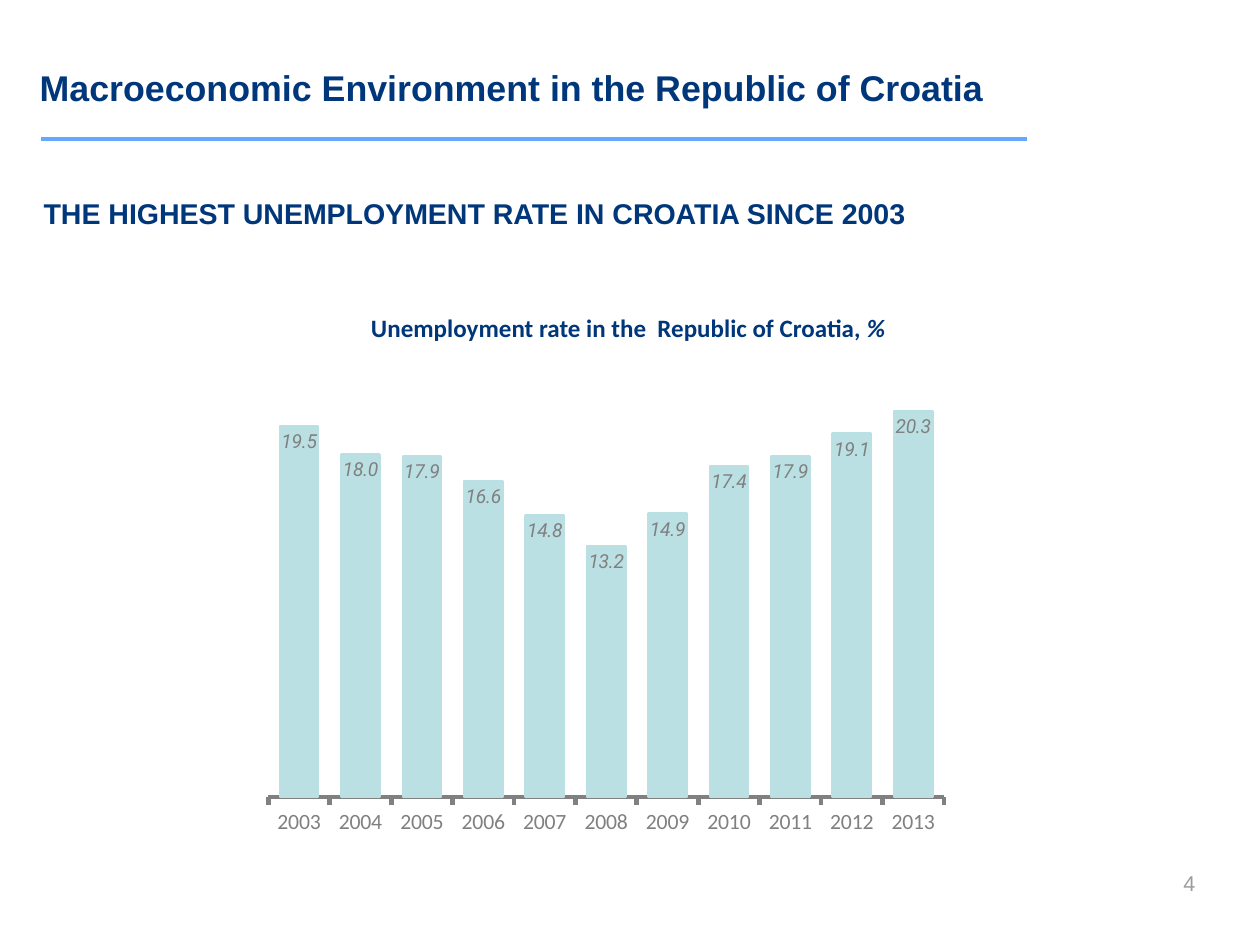
import dataclasses

import lxml.etree
import pptx
import pptx.chart.data
import pptx.dml.color
import pptx.enum.chart
import pptx.enum.shapes
import pptx.enum.text
import pptx.oxml
import pptx.oxml.ns
import pptx.util

PX = 7112
ALIGN = pptx.enum.text.PP_ALIGN
ANCHOR = pptx.enum.text.MSO_ANCHOR
YEARS = [str(year) for year in range(2003, 2014)]
RATES = [19.5, 18.0, 17.9, 16.6, 14.8, 13.2, 14.9, 17.4, 17.9, 19.1, 20.3]


@dataclasses.dataclass(frozen=True)
class Theme:
    """Colours, fonts and type sizes of the slide."""
    navy: str = "00367A"
    rule: str = "64A8FF"
    bar: str = "BBE0E3"
    grey: str = "808080"
    number: str = "9C9C9C"
    sans: str = "Arial"
    chart: str = "Calibri"
    label: str = "Roboto"
    title_pt: float = 20
    heading_pt: float = 16
    caption_pt: float = 14
    number_pt: float = 12
    axis_pt: float = 12.2
    label_pt: float = 10.8


THEME = Theme()


def emu(*lengths):
    """Turn px lengths into EMU."""
    return [length * PX for length in lengths]


def rgb(colour):
    """Return the colour object of a hex string."""
    return pptx.dml.color.RGBColor.from_string(colour)


def set_font(font, name, size, colour, bold=False, italic=False):
    """Style a font object."""
    font.name = name
    font.size = pptx.util.Pt(size)
    font.color.rgb = rgb(colour)
    font.bold = bold
    font.italic = italic


def add_text(s, box, text, name, size, colour, bold=True, align=ALIGN.LEFT, anchor=ANCHOR.TOP):
    """Add a one-paragraph text box and return its paragraph."""
    tf = s.shapes.add_textbox(*emu(*box)).text_frame
    tf.word_wrap = True
    tf.vertical_anchor = anchor
    p = tf.paragraphs[0]
    p.alignment = align
    p.add_run().text = text
    set_font(p.font, name, size, colour, bold)
    return p


def add_header(s, box):
    """Place the title and the rule below it."""
    x, y, w, h = box
    add_text(s, box, "Macroeconomic Environment in the Republic of Croatia",
             THEME.sans, THEME.title_pt, THEME.navy, anchor=ANCHOR.MIDDLE)
    rule_y = y + h + 8
    rule = s.shapes.add_connector(pptx.enum.shapes.MSO_CONNECTOR.STRAIGHT,
                                  *emu(x + 14, rule_y, x + 1000, rule_y))
    rule.line.color.rgb = rgb(THEME.rule)
    rule.line.width = pptx.util.Pt(2)
    lxml.etree.SubElement(rule._element.spPr, pptx.oxml.ns.qn("a:effectLst"))


def set_plot_area(chart, **fractions):
    """Fix the inner plot area as fractions of the chart."""
    area = chart._chartSpace.chart.plotArea
    for layout in area.findall(pptx.oxml.ns.qn("c:layout")):
        area.remove(layout)
    values = "".join(f'<c:{key} val="{value}"/>' for key, value in fractions.items())
    area.insert(0, pptx.oxml.parse_xml(
        f'<c:layout {pptx.oxml.ns.nsdecls("c")}><c:manualLayout><c:layoutTarget val="inner"/>'
        f'<c:xMode val="edge"/><c:yMode val="edge"/>{values}</c:manualLayout></c:layout>'))


def add_rate_chart(s, box):
    """Place the unemployment columns and their caption."""
    x, y, w, h = box
    data = pptx.chart.data.CategoryChartData()
    data.categories = YEARS
    data.add_series("Unemployment rate", RATES)
    chart = s.shapes.add_chart(pptx.enum.chart.XL_CHART_TYPE.COLUMN_STACKED,
                               *emu(*box), data).chart
    chart.has_title = False
    chart.has_legend = False
    set_font(chart.font, THEME.chart, THEME.axis_pt, THEME.grey)
    set_plot_area(chart, x=0, y=0.05, w=0.87, h=0.72)

    years = chart.category_axis
    years.major_tick_mark = pptx.enum.chart.XL_TICK_MARK.OUTSIDE
    years.format.line.color.rgb = rgb(THEME.grey)
    years.format.line.width = pptx.util.Pt(2.7)
    rates = chart.value_axis
    rates.minimum_scale = 0
    rates.maximum_scale = 23
    rates.has_major_gridlines = False
    rates.visible = False

    plot = chart.plots[0]
    plot.gap_width = 60
    plot.overlap = 100
    plot.vary_by_categories = False
    columns = plot.series[0]
    columns.format.fill.solid()
    columns.format.fill.fore_color.rgb = rgb(THEME.bar)
    columns.format.line.color.rgb = rgb(THEME.bar)
    columns.format.line.width = pptx.util.Pt(1.35)
    labels = columns.data_labels
    labels.show_value = True
    labels.number_format = "#,##0.0"
    labels.number_format_is_linked = False
    labels.position = pptx.enum.chart.XL_LABEL_POSITION.INSIDE_END
    set_font(labels.font, THEME.label, THEME.label_pt, THEME.grey, italic=True)

    p = add_text(s, (x + 61, y - 23, 602, 51), "Unemployment rate in the  Republic of Croatia, ",
                 THEME.chart, THEME.caption_pt, THEME.navy, align=ALIGN.CENTER)
    r = p.add_run()
    r.text = "%"
    r.font.italic = True


def add_unemployment_slide(prs):
    """Build the unemployment slide."""
    s = prs.slides.add_slide(prs.slide_layouts[6])
    add_header(s, (27, 44, 1215, 87))
    add_text(s, (31, 190, 1134, 107), "THE HIGHEST UNEMPLOYMENT RATE IN CROATIA SINCE 2003",
             THEME.sans, THEME.heading_pt, THEME.navy)
    add_rate_chart(s, (266, 329, 779, 608))
    add_text(s, (914, 850, 294, 66), "4", THEME.sans, THEME.number_pt, THEME.number,
             bold=False, align=ALIGN.RIGHT, anchor=ANCHOR.MIDDLE)


def main():
    """Create and save the presentation."""
    prs = pptx.Presentation()
    prs.slide_width, prs.slide_height = emu(1260, 945)
    add_unemployment_slide(prs)
    prs.save("out.pptx")


if __name__ == "__main__":
    main()
